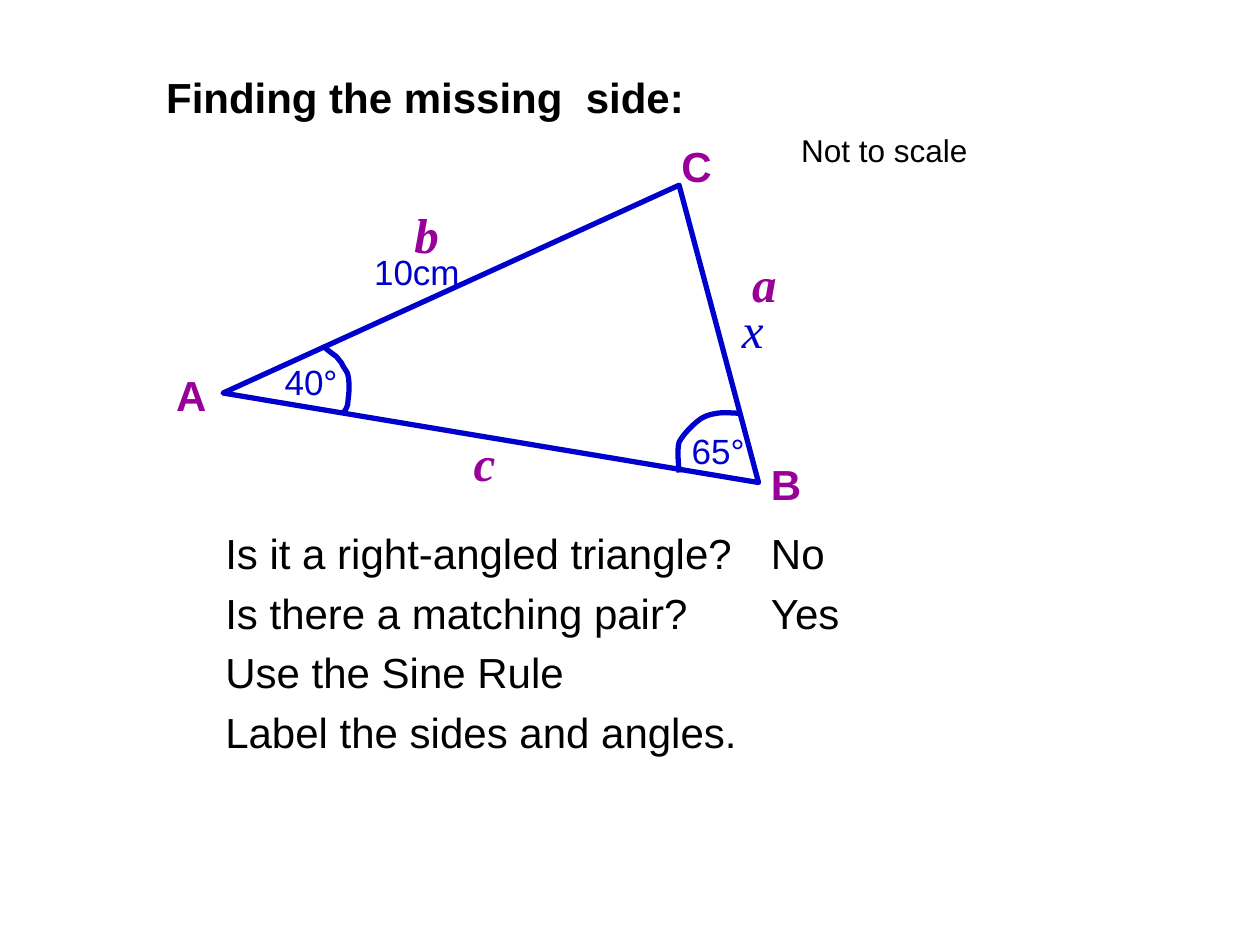
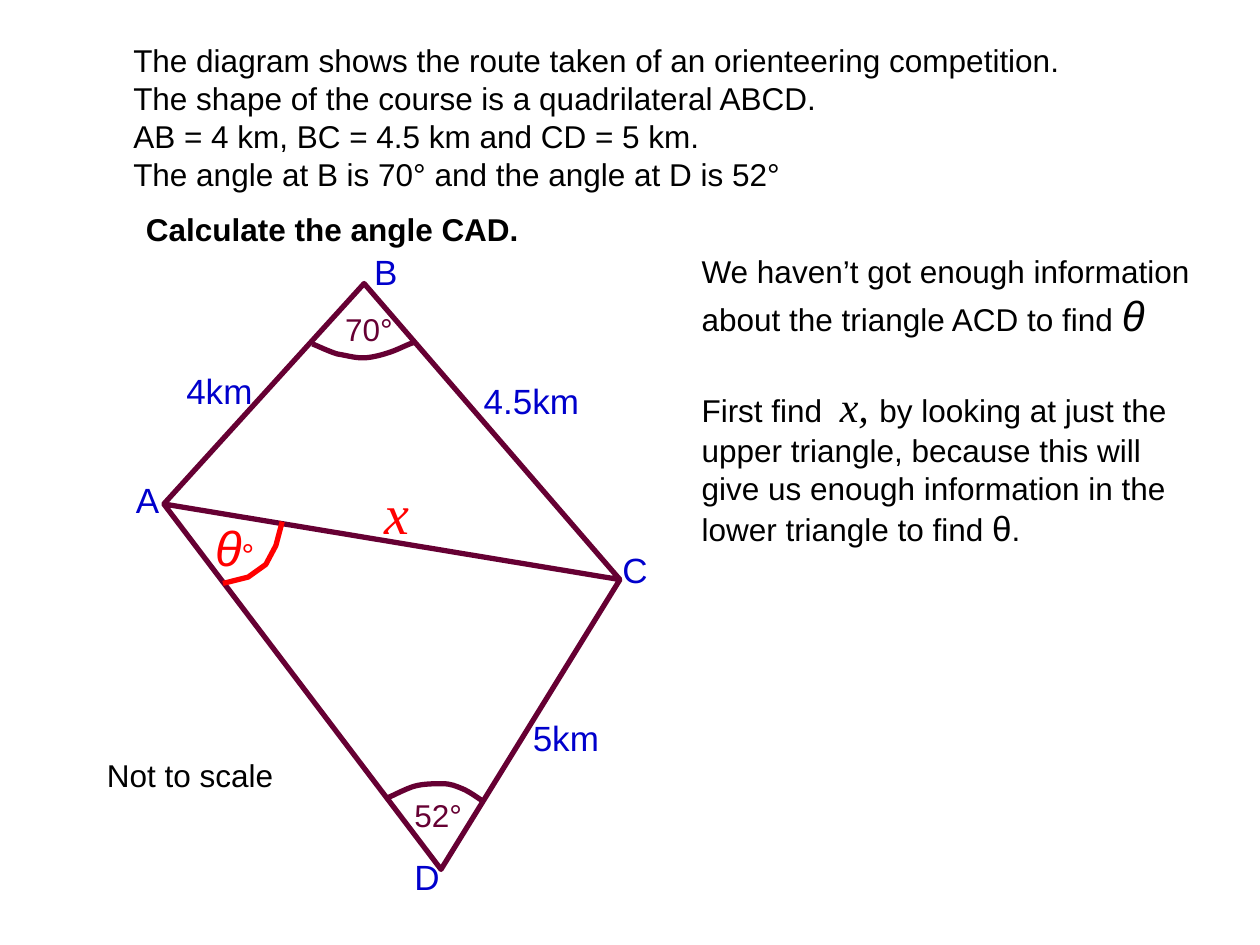
from collections import namedtuple

import pptx
import pptx.dml.color
import pptx.enum.text
import pptx.oxml
import pptx.oxml.ns
import pptx.util

Inches = pptx.util.Inches
Box = namedtuple("Box", "left top width height")
Style = namedtuple("Style", "size color bold italic font", defaults=(False, False, "Arial"))

BLACK, BLUE, PURPLE, MAROON, RED = "000000", "0000CC", "990099", "660033", "FF0000"
SERIF = "Times New Roman"
BODY = Style(18, BLACK)
TASK = Style(18, BLACK, bold=True)
HEADING = Style(24, BLACK, bold=True)
STEP = Style(24, BLACK)
MEASURE = Style(20, BLUE)
VERTEX = Style(24, PURPLE, bold=True)
SIDE = Style(28, PURPLE, True, True, SERIF)
UNKNOWN = Style(28, BLUE, italic=True, font=SERIF)
ANGLE = Style(18, MAROON)


def rgb(value):
    return pptx.dml.color.RGBColor.from_string(value)


def write_text(canvas, box, *paragraphs):
    frame = canvas.add_textbox(*map(Inches, box)).text_frame
    frame.word_wrap = True
    frame.auto_size = pptx.enum.text.MSO_AUTO_SIZE.SHAPE_TO_FIT_TEXT
    for index, runs in enumerate(paragraphs):
        paragraph = frame.add_paragraph() if index else frame.paragraphs[0]
        for words, style in runs:
            run = paragraph.add_run()
            run.text = words
            run.font.name = style.font
            run.font.size = pptx.util.Pt(style.size)
            run.font.bold = style.bold
            run.font.italic = style.italic
            run.font.color.rgb = rgb(style.color)


def write_line(canvas, box, x, y, width, words, style):
    height = style.size / 60 + 0.1
    write_text(canvas, Box(box.left + x, box.top + y, width, height), [(words, style)])


def draw_outline(canvas, box, points, color, close=False, curved=False):
    placed = [(Inches(box.left + x), Inches(box.top + y)) for x, y in points]
    builder = canvas.build_freeform(*placed[0], scale=1.0)
    builder.add_line_segments(placed[1:], close=close)
    outline = builder.convert_to_shape()
    outline.shadow.inherit = False
    outline.fill.background()
    outline.line.color.rgb = rgb(color)
    outline.line.width = pptx.util.Pt(3)
    pen = outline.line.fill._xPr
    pen.append(pptx.oxml.parse_xml(f"<a:round {pptx.oxml.ns.nsdecls('a')}/>"))
    if curved:
        bend_segments(outline)


def bend_segments(outline):
    qn = pptx.oxml.ns.qn
    segments = list(outline._element.iter(qn("a:lnTo")))
    for start in range(0, len(segments), 3):
        curve, *others = segments[start:start + 3]
        bezier = pptx.oxml.parse_xml(f"<a:cubicBezTo {pptx.oxml.ns.nsdecls('a')}/>")
        curve.addprevious(bezier)
        for segment in (curve, *others):
            bezier.append(segment[0])
            segment.getparent().remove(segment)


def draw_triangle(canvas, box):
    draw_outline(canvas, box, [(0.77, 2.12), (4.39, 0.47), (5.02, 2.83)], BLUE, close=True)
    arc_a = [(1.58, 1.76), (1.59, 1.77), (1.64, 1.81), (1.67, 1.83),
             (1.69, 1.85), (1.69, 1.86), (1.71, 1.88),
             (1.72, 1.91), (1.75, 1.94), (1.76, 1.97),
             (1.77, 2.01), (1.77, 2.05), (1.77, 2.09),
             (1.77, 2.13), (1.76, 2.18), (1.76, 2.21),
             (1.75, 2.24), (1.74, 2.26), (1.73, 2.27)]
    arc_b = [(4.87, 2.28), (4.84, 2.28), (4.74, 2.27), (4.69, 2.28),
             (4.63, 2.29), (4.59, 2.3), (4.54, 2.34),
             (4.49, 2.38), (4.42, 2.45), (4.39, 2.51),
             (4.37, 2.58), (4.39, 2.71), (4.39, 2.75)]
    for arc in (arc_a, arc_b):
        draw_outline(canvas, box, arc, BLUE, curved=True)
    for words, x, y, style in (
        ("10cm", 1.87, 0.94, MEASURE),
        ("65°", 4.39, 2.36, MEASURE),
        ("40°", 1.16, 1.81, MEASURE),
        ("x", 4.79, 1.33, UNKNOWN),
        ("A", 0.3, 1.88, VERTEX),
        ("B", 5.02, 2.59, VERTEX),
        ("C", 4.31, 0.07, VERTEX),
        ("a", 4.87, 0.96, SIDE),
        ("b", 2.19, 0.57, SIDE),
        ("c", 2.66, 2.38, SIDE),
    ):
        write_line(canvas, box, x, y, 1.02, words, style)
    write_line(canvas, box, 5.26, -0.01, 1.81, "Not to scale", BODY)


def write_steps(canvas, box):
    steps = (
        ("Is it a right-angled triangle?", "No"),
        ("Is there a matching pair?", "Yes"),
        ("Use the Sine Rule", None),
        ("Label the sides and angles.", None),
    )
    pitch = box.height / len(steps)
    for row, (step, answer) in enumerate(steps):
        write_line(canvas, box, 0, row * pitch, 4.57, step, STEP)
        if answer:
            write_line(canvas, box, 4.33, row * pitch, 0.79, answer, STEP)


def draw_course(canvas, box):
    a, b, c, d = (0.8, 2.5), (2.39, 0.75), (4.42, 3.1), (3, 5.4)
    draw_outline(canvas, box, [a, b, c, d, a, c], MAROON)
    arc_b = [(1.98, 1.23), (2.01, 1.24), (2.11, 1.29), (2.18, 1.31),
             (2.25, 1.32), (2.31, 1.34), (2.38, 1.34),
             (2.44, 1.34), (2.52, 1.32), (2.58, 1.3),
             (2.65, 1.28), (2.74, 1.23), (2.78, 1.22)]
    arc_d = [(2.58, 4.83), (2.61, 4.82), (2.72, 4.76), (2.79, 4.74),
             (2.86, 4.72), (2.95, 4.72), (3.01, 4.72),
             (3.08, 4.72), (3.12, 4.74), (3.17, 4.76),
             (3.22, 4.78), (3.29, 4.83), (3.32, 4.85)]
    for arc in (arc_b, arc_d):
        draw_outline(canvas, box, arc, MAROON, curved=True)
    for words, x, y, width, style in (
        ("4km", 0.88, 1.38, 0.79, MEASURE),
        ("4.5km", 3.24, 1.46, 1.1, MEASURE),
        ("5km", 3.63, 4.14, 0.79, MEASURE),
        ("A", 0.48, 2.25, 0.79, MEASURE),
        ("B", 2.37, 0.44, 0.79, MEASURE),
        ("C", 4.34, 2.8, 0.79, MEASURE),
        ("D", 2.69, 5.24, 0.79, MEASURE),
        ("70°", 2.14, 0.91, 0.63, ANGLE),
        ("52°", 2.69, 4.77, 0.63, ANGLE),
        ("x", 2.45, 2.25, 0.63, UNKNOWN._replace(size=32, color=RED)),
        ("Not to scale", 0.25, 4.45, 1.81, BODY),
    ):
        write_line(canvas, box, x, y, width, words, style)
    draw_theta(canvas.add_group_shape().shapes, Box(box.left + 1.11, box.top + 2.56, 0.63, 0.57))


def draw_theta(canvas, box):
    arc = [(0.63, 0.08), (0.58, 0.27), (0.5, 0.42), (0.36, 0.52), (0.16, 0.57)]
    draw_outline(canvas, box, arc, RED)
    write_text(canvas, box, [("θ", Style(28, RED, italic=True)), ("°", Style(18, RED))])


def write_problem(canvas, box):
    facts = (
        "The diagram shows the route taken of an orienteering competition.",
        "The shape of the course is a quadrilateral ABCD.",
        "AB = 4 km, BC = 4.5 km and CD = 5 km.",
        "The angle at B is 70° and the angle at D is 52°",
    )
    write_text(canvas, box, *([(fact, BODY)] for fact in facts))
    write_line(canvas, box, 0.1, 1.34, 3.39, "Calculate the angle CAD.", TASK)


def write_reasoning(canvas, box):
    write_text(canvas, box._replace(height=0.8), [
        ("We haven’t got enough information about the triangle ACD to find ", BODY),
        ("θ", Style(24, BLACK, italic=True)),
    ])
    write_text(canvas, Box(box.left, box.top + 1.02, 4.1, 1.43), [
        ("First find  ", BODY),
        ("x, ", Style(24, BLACK, italic=True, font=SERIF)),
        ("by looking at just the upper triangle, because this will give us "
         "enough information in the lower triangle to find ", BODY),
        ("θ", Style(20, BLACK)),
        (".", BODY),
    ])


def build_missing_side(canvas):
    write_line(canvas, Box(1.22, 0.52, 5.12, 0.5), 0, 0, 5.12,
               "Finding the missing  side:", HEADING)
    draw_triangle(canvas, Box(1, 1, 7, 3))
    write_steps(canvas, Box(1.69, 4.14, 5.12, 1.89))


def build_orienteering(canvas):
    write_problem(canvas, Box(0.96, 0.28, 8.84, 1.3))
    draw_course(canvas, Box(0.5, 1.5, 5, 5.7))
    write_reasoning(canvas, Box(5.47, 1.95, 4.22, 2.45))


def main():
    deck = pptx.Presentation()
    deck.slide_width, deck.slide_height = Inches(10), Inches(7.5)
    for build in (build_missing_side, build_orienteering):
        build(deck.slides.add_slide(deck.slide_layouts[6]).shapes)
    deck.save("out.pptx")


if __name__ == "__main__":
    main()
